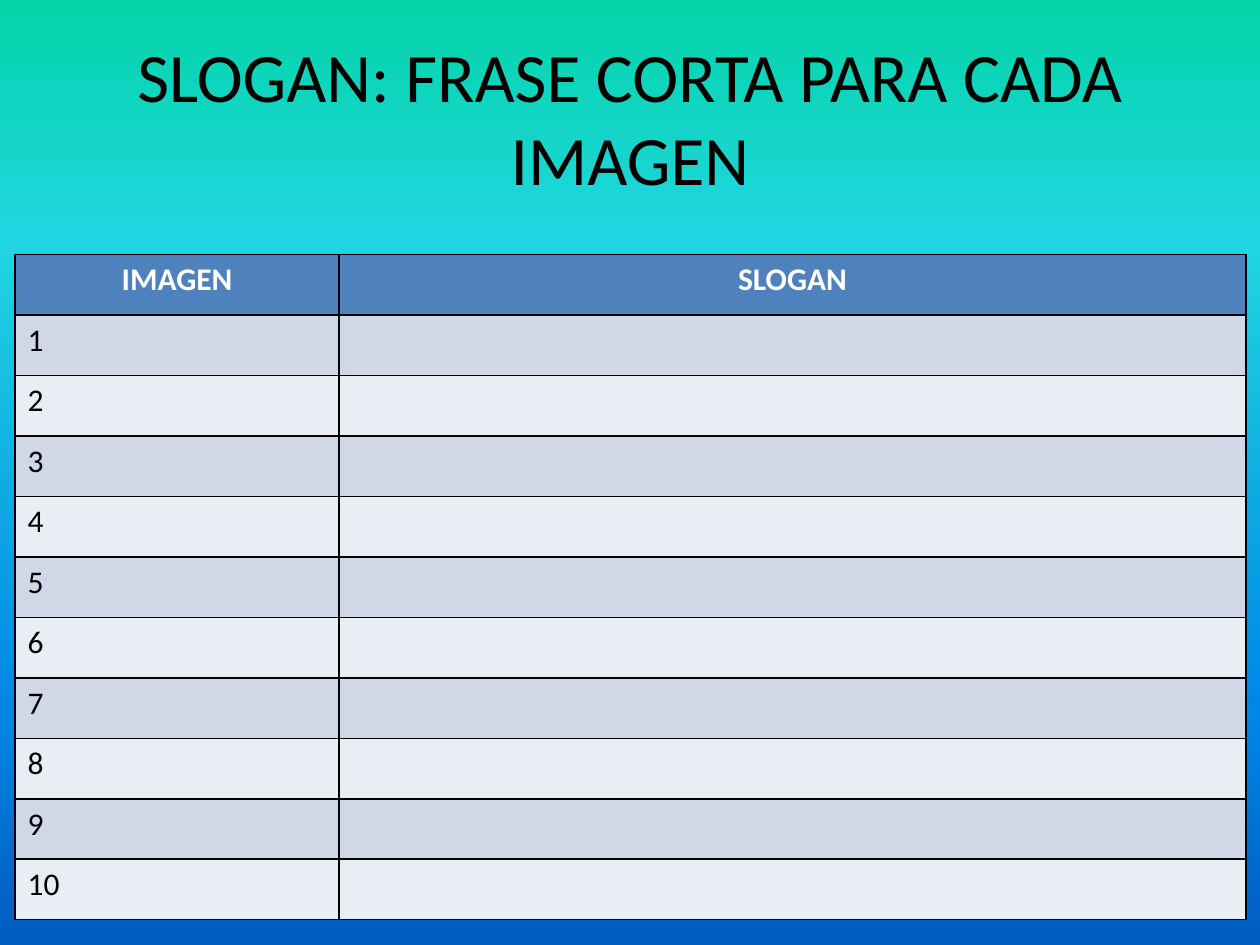
from lxml.etree import SubElement
from pptx import Presentation
from pptx.dml.color import RGBColor
from pptx.enum.text import MSO_ANCHOR, MSO_AUTO_SIZE, PP_ALIGN
from pptx.oxml.ns import qn
from pptx.util import Inches, Pt

BLACK = RGBColor(0x00, 0x00, 0x00)
WHITE = RGBColor(0xFF, 0xFF, 0xFF)
HEADER = RGBColor(0x4F, 0x81, 0xBD)
BAND_DARK = RGBColor(0xD0, 0xD8, 0xE8)
BAND_LIGHT = RGBColor(0xE9, 0xED, 0xF4)
SKY = [
    (0, RGBColor(0x03, 0xD4, 0xA8)),
    (25, RGBColor(0x21, 0xD6, 0xE0)),
    (75, RGBColor(0x00, 0x87, 0xE6)),
    (100, RGBColor(0x00, 0x5C, 0xBF)),
]


class SlideBuilder:
    font = "Calibri"
    title_size = Pt(39.6)
    cell_size = Pt(18)
    border_width = Pt(1)

    def __init__(self, prs):
        self.s = prs.slides.add_slide(prs.slide_layouts[5])

    def background(self, stops):
        fill = self.s.background.fill
        fill.gradient()
        fill.gradient_angle = 270
        gs_list = next(self.s.element.iter(qn("a:gsLst")))
        for gs in list(gs_list):
            gs_list.remove(gs)
        for position, color in stops:
            gs = SubElement(gs_list, qn("a:gs"), pos=str(position * 1000))
            SubElement(gs, qn("a:srgbClr"), val=str(color))

    def format_text(self, p, size, color, bold=False, align=None):
        p.alignment = align
        for r in p.runs:
            r.font.name = self.font
            r.font.size = size
            r.font.bold = bold
            r.font.color.rgb = color

    def title(self, text, left, top, width, height):
        sp = self.s.shapes.title
        sp.left, sp.top = Inches(left), Inches(top)
        sp.width, sp.height = Inches(width), Inches(height)
        tf = sp.text_frame
        tf.text = text
        tf.word_wrap = True
        tf.auto_size = MSO_AUTO_SIZE.NONE
        tf.vertical_anchor = MSO_ANCHOR.MIDDLE
        self.format_text(tf.paragraphs[0], self.title_size, BLACK, align=PP_ALIGN.CENTER)

    def borders(self, cell):
        properties = cell._tc.get_or_add_tcPr()
        for side in ("lnL", "lnR", "lnT", "lnB"):
            line = SubElement(properties, qn(f"a:{side}"), w=str(self.border_width))
            fill = SubElement(line, qn("a:solidFill"))
            SubElement(fill, qn("a:srgbClr"), val=str(BLACK))

    def table(self, rows, left, top, col_widths, row_height):
        frame = self.s.shapes.add_table(
            len(rows), len(col_widths), Inches(left), Inches(top),
            Inches(sum(col_widths)), Inches(row_height * len(rows)))
        table = frame.table
        for column, width in zip(table.columns, col_widths):
            column.width = Inches(width)
        for i, values in enumerate(rows):
            table.rows[i].height = Inches(row_height)
            is_header = i == 0
            band = HEADER if is_header else BAND_DARK if i % 2 else BAND_LIGHT
            for cell, value in zip(table.rows[i].cells, values):
                self.borders(cell)
                cell.fill.solid()
                cell.fill.fore_color.rgb = band
                if not value:
                    continue
                cell.text_frame.text = value
                self.format_text(
                    cell.text_frame.paragraphs[0], self.cell_size,
                    WHITE if is_header else BLACK, bold=is_header,
                    align=PP_ALIGN.CENTER if is_header else PP_ALIGN.LEFT)


def main():
    prs = Presentation()
    prs.slide_width, prs.slide_height = Inches(10), Inches(7.5)
    slide = SlideBuilder(prs)
    slide.background(SKY)
    slide.title("SLOGAN: FRASE CORTA PARA CADA IMAGEN", 0.5, 0.3, 9, 1.25)
    rows = [("IMAGEN", "SLOGAN")] + [(str(n), "") for n in range(1, 11)]
    slide.table(rows, 0.12, 2.02, (2.57, 7.2), 0.48)
    prs.save("out.pptx")


if __name__ == "__main__":
    main()
